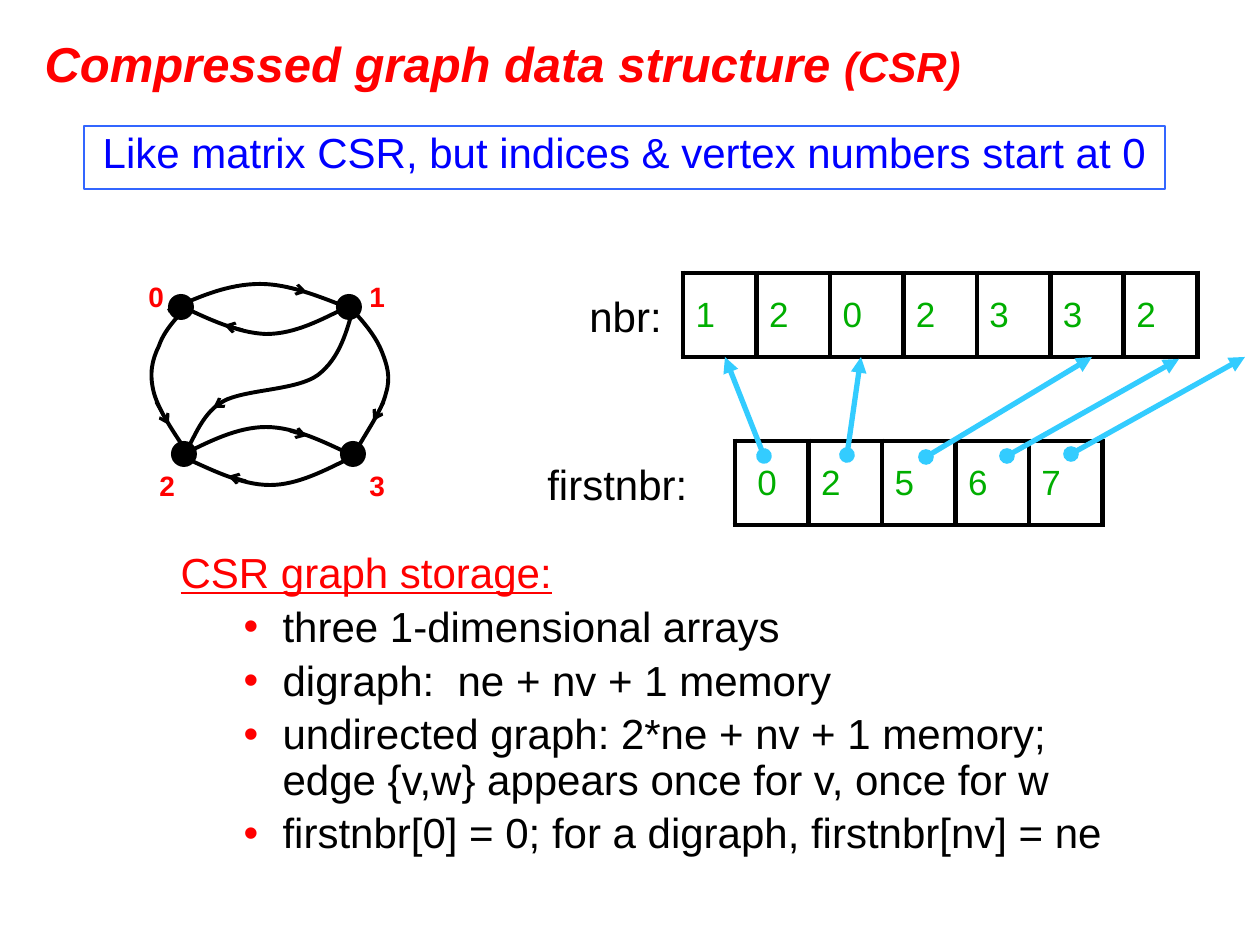
from lxml import etree
from pptx import Presentation
from pptx import util as u
from pptx.dml.color import RGBColor
from pptx.enum import shapes, text
from pptx.oxml.ns import qn

SCALE = 914400 / 126
BLACK, RED, GREEN, BLUE, SKY = "000000", "FF0000", "00AE00", "0000FF", "33CCFF"
rgb = RGBColor.from_string


def emu(*pixels):
    return [u.Emu(round(p * SCALE)) for p in pixels]


def draw_arrow(ends, color, width, tail, head=None):
    """Draw a line from the first to the second point of ends, in px."""
    arrow = slide.shapes.add_connector(shapes.MSO_CONNECTOR.STRAIGHT, *emu(*ends))
    arrow.line.color.rgb = rgb(color)
    arrow.line.width = u.Pt(width)
    ln = arrow.line._ln
    if head:
        etree.SubElement(ln, qn("a:headEnd"), type=head)
    etree.SubElement(ln, qn("a:tailEnd"), type=tail)
    etree.SubElement(arrow._element.spPr, qn("a:effectLst"))


prs = Presentation()
prs.slide_width, prs.slide_height = emu(1260, 945)
slide = prs.slides.add_slide(prs.slide_layouts[1])
styled = []  # (text frame, size, colour, bold)

# Title
title = slide.shapes.title
title.left, title.top, title.width, title.height = emu(32, 23, 1176, 79)
heading = title.text_frame
heading.text = "Compressed graph data structure "
heading.paragraphs[0].add_run().text = "(CSR)"
heading.paragraphs[0].alignment = text.PP_ALIGN.LEFT
heading.auto_size = text.MSO_AUTO_SIZE.NONE
styled.append((heading, 28, RED, True))

# Storage list
storage = slide.placeholders[1]
storage.left, storage.top, storage.width, storage.height = emu(168, 546, 1071, 346)
storage_text = storage.text_frame
storage_text.auto_size = text.MSO_AUTO_SIZE.NONE
storage_text.text = "CSR graph storage:"
for fact in ("three 1-dimensional arrays",
             "digraph:  ne + nv + 1 memory",
             "undirected graph: 2*ne + nv + 1 memory;\vedge {v,w} appears once for v, once for w",
             "firstnbr[0] = 0; for a digraph, firstnbr[nv] = ne"):
    item = storage_text.add_paragraph()
    item.text = fact
    item.level = 1
for item in storage_text.paragraphs:
    item.line_spacing = 0.9
    pPr = item._p.get_or_add_pPr()
    margin, indent = emu(102, -39) if item.level else (0, 0)
    pPr.set("marL", str(margin))
    pPr.set("indent", str(indent))
    if item.level:
        bullet_color = etree.SubElement(pPr, qn("a:buClr"))
        etree.SubElement(bullet_color, qn("a:srgbClr"), val=RED)
        etree.SubElement(pPr, qn("a:buChar"), char="•")
    else:
        etree.SubElement(pPr, qn("a:buNone"))
    for line_break in item._p.findall(qn("a:br")):
        etree.SubElement(line_break, qn("a:rPr"), sz="2400")
styled.append((storage_text, 24, BLACK, False))

# Framed remark
remark = slide.shapes.add_shape(shapes.MSO_SHAPE.RECTANGLE, *emu(84, 126, 1081, 63))
remark.shadow.inherit = False
remark.fill.background()
remark.line.color.rgb = rgb("3366FF")
remark.line.width = u.Pt(1)
remark_text = remark.text_frame
remark_text.text = "Like matrix CSR, but indices & vertex numbers start at 0"
remark_text.vertical_anchor = text.MSO_ANCHOR.TOP
remark_text.paragraphs[0].alignment = text.PP_ALIGN.CENTER
remark_text.paragraphs[0].line_spacing = 0.9
styled.append((remark_text, 24, BLUE, False))

# The two arrays
CELL_W, CELL_H = 73.5, 84
for left, top, values in ((683, 273, ["1", "2", "0", "2", "3", "3", "2"]),
                          (735, 441, [" 0", "2", "5", "6", "7"])):
    array = slide.shapes.add_table(
        1, len(values), *emu(left, top, CELL_W * len(values), CELL_H)).table
    array.first_row = array.horz_banding = False
    for cell, value in zip(array.rows[0].cells, values):
        cell.text = value
        cell.vertical_anchor = text.MSO_ANCHOR.MIDDLE
        cell.fill.background()
        tcPr = cell._tc.get_or_add_tcPr()
        for position, side in enumerate("LRTB"):
            border = etree.Element(qn(f"a:ln{side}"), w=str(u.Pt(3)))
            border_fill = etree.SubElement(border, qn("a:solidFill"))
            etree.SubElement(border_fill, qn("a:srgbClr"), val=BLACK)
            tcPr.insert(position, border)
        styled.append((cell.text_frame, 20, GREEN, False))

# Pointers from firstnbr into nbr
for pointer in ((764, 456, 725, 357), (847, 455, 861, 357), (926, 457, 1092, 357),
                (1007, 456, 1179, 359), (1071, 454, 1245, 357)):
    draw_arrow(pointer, SKY, 3, "triangle", "oval")

# Vertices
for left, top in ((168, 294), (336, 294), (171, 441), (340, 441)):
    vertex = slide.shapes.add_shape(shapes.MSO_SHAPE.OVAL, *emu(left, top, 26, 26))
    vertex.shadow.inherit = False
    vertex.fill.solid()
    vertex.fill.fore_color.rgb = rgb(BLACK)
    vertex.line.fill.background()

# Edges: start and Bezier control points, then the arrow on the edge
edges = (
    ([(168, 311), (198, 297), (228, 284), (260, 284), (292, 284), (325, 299), (359, 312)],
     (286, 287, 307, 292)),
    ([(349, 306), (321, 320), (295, 334), (266, 334), (238, 333), (208, 319), (179, 305)],
     (243, 330, 224, 325)),
    ([(184, 454), (210, 441), (238, 427), (266, 427), (295, 427), (324, 442), (354, 456)],
     (290, 431, 307, 436)),
    ([(352, 457), (324, 471), (297, 485), (270, 485), (241, 485), (212, 470), (181, 456)],
     (246, 481, 228, 476)),
    ([(189, 305), (176, 318), (164, 331), (159, 346), (152, 360), (149, 374), (154, 393),
      (159, 411), (174, 433), (189, 455)], (156, 402, 169, 425)),
    ([(357, 315), (367, 326), (377, 339), (382, 352), (387, 365), (391, 377), (386, 393),
      (382, 410), (369, 428), (357, 449)], (384, 402, 373, 421)),
    ([(185, 452), (192, 445), (200, 415), (222, 402), (244, 389), (296, 391), (318, 375),
      (340, 358), (347, 331), (354, 305)], (229, 398, 213, 408)),
)
for (start, *controls), arrow_ends in edges:
    builder = slide.shapes.build_freeform(*start, scale=SCALE)
    builder.add_line_segments(controls, close=False)
    edge = builder.convert_to_shape()
    edge.shadow.inherit = False
    edge.fill.background()
    edge.line.color.rgb = rgb(BLACK)
    edge.line.width = u.Pt(2.25)
    # Every three straight segments become one Bezier curve
    outline = next(edge._element.iter(qn("a:path")))
    segments = outline.findall(qn("a:lnTo"))
    for first in range(0, len(segments), 3):
        curve = etree.SubElement(outline, qn("a:cubicBezTo"))
        for segment in segments[first:first + 3]:
            curve.append(segment[0])
            outline.remove(segment)
    draw_arrow(arrow_ends, BLACK, 1.75, "arrow")

# Array names and vertex numbers
for words, left, top, width, height, size, color, bold in (
        ("nbr:", 577, 284, 98, 63, 24, BLACK, False),
        ("firstnbr:", 535, 452, 166, 63, 24, BLACK, False),
        ("0", 136, 273, 32, 47, 16, RED, True),
        ("1", 357, 273, 40, 47, 16, RED, True),
        ("2", 147, 462, 40, 47, 16, RED, True),
        ("3", 357, 462, 40, 47, 16, RED, True)):
    label = slide.shapes.add_textbox(*emu(left, top, width, height)).text_frame
    label.text = words
    label.word_wrap = False
    styled.append((label, size, color, bold))

for frame, size, color, bold in styled:
    for paragraph in frame.paragraphs:
        for run in paragraph.runs:
            run.font.name = "Arial"
            run.font.size = u.Pt(size)
            run.font.color.rgb = rgb(color)
            run.font.bold = bold
for run in heading.paragraphs[0].runs:
    run.font.italic = True
heading.paragraphs[0].runs[1].font.size = u.Pt(24)
storage_heading = storage_text.paragraphs[0].runs[0].font
storage_heading.color.rgb = rgb(RED)
storage_heading.underline = True

prs.save("out.pptx")
